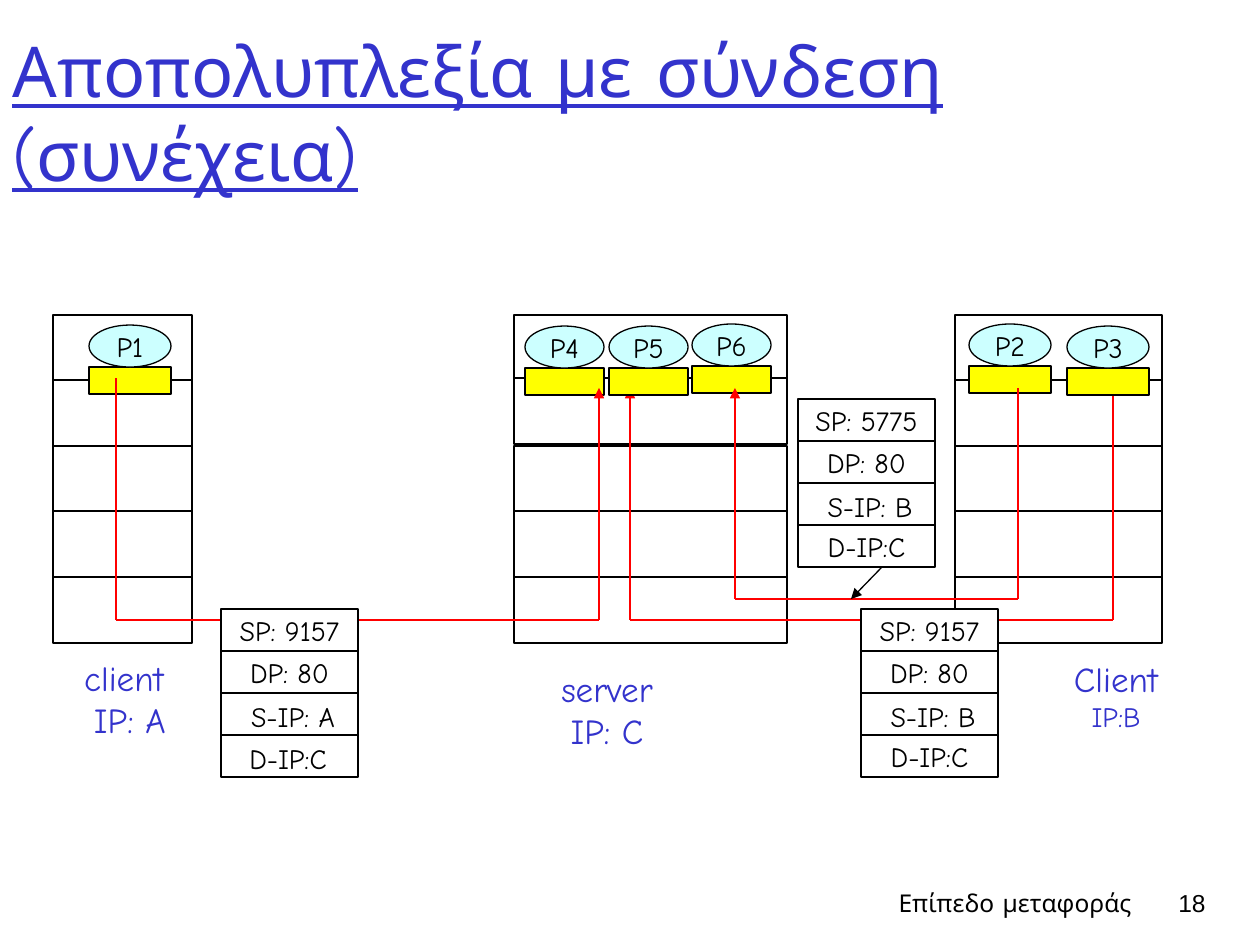
from lxml.etree import SubElement
from pptx import Presentation
from pptx.dml.color import RGBColor
from pptx.enum.shapes import MSO_CONNECTOR, MSO_SHAPE
from pptx.enum.text import MSO_ANCHOR, PP_ALIGN
from pptx.oxml.ns import qn
from pptx.util import Emu, Pt

INK, BLUE, RED = "000000", "3333CC", "FF0000"
WHITE, AQUA, YELLOW = "FFFFFF", "CCFFFF", "FFFF00"
FACE = "Comic Neue"


def px(n):
    return Emu(round(n * 914400 / 126))


def paint(target, hue):
    if hasattr(target, "solid"):
        target.solid()
        target = target.fore_color
    target.rgb = RGBColor.from_string(hue)


def write(frame, lines, hue=INK, align=PP_ALIGN.CENTER, wrap=False,
          anchor=MSO_ANCHOR.TOP, face=FACE, under=None):
    """Fill a frame with (text, size) lines."""
    frame.word_wrap = wrap
    frame.vertical_anchor = anchor
    for i, (text, size) in enumerate(lines):
        para = frame.add_paragraph() if i else frame.paragraphs[0]
        para.text = text
        para.alignment = align
        font = para.font
        font.size, font.name, font.underline = Pt(size), face, under
        paint(font.color, hue)


def label(slide, x, y, w, h, lines, **style):
    box = slide.shapes.add_textbox(px(x), px(y), px(w), px(h))
    write(box.text_frame, lines, **style)


def block(slide, x, y, w, h, hue=WHITE, text="", kind=MSO_SHAPE.RECTANGLE):
    shape = slide.shapes.add_shape(kind, px(x), px(y), px(w), px(h))
    shape.shadow.inherit = False
    paint(shape.fill, hue)
    paint(shape.line.fill, INK)
    shape.line.width = Pt(0.75)
    if text:
        write(shape.text_frame, [(text, 16)], anchor=MSO_ANCHOR.MIDDLE)


def wire(slide, start, end, hue=RED, width=1.5, arrow=False):
    line = slide.shapes.add_connector(
        MSO_CONNECTOR.STRAIGHT, *map(px, start + end))
    paint(line.line.fill, hue)
    line.line.width = Pt(width)
    props = line._element.spPr
    if arrow:
        SubElement(props.find(qn("a:ln")), qn("a:tailEnd"), type="triangle")
    SubElement(props, qn("a:effectLst"))


def path(slide, *points, arrow=False):
    """Join points with red wires; the last may carry an arrow."""
    for i, (start, end) in enumerate(zip(points, points[1:]), 2):
        wire(slide, start, end, arrow=arrow and i == len(points))


def host(slide, x, y, w, lift=0):
    """Stack of five layers; lift raises the second one."""
    for i in range(5):
        top = y + i * 131 // 2 - (lift if i == 1 else 0)
        block(slide, x, top, w, 66)


def process(slide, x, y, w, name):
    """Process oval standing on its socket."""
    block(slide, x, y + 42, w, 27, YELLOW)
    block(slide, x, y, w, 42, AQUA, name, MSO_SHAPE.OVAL)


def packet(slide, x, y, port, source, loose=None):
    """Header of four fields; loose fields are set in their own box."""
    loose = loose or {2: 120}
    texts = f"SP: {port}", "DP: 80", f"S-IP: {source}", "D-IP:C"
    for i, text in enumerate(texts):
        block(slide, x, y + 42 * i, 137, 42, text="" if i in loose else text)
    for i, w in loose.items():
        label(slide, x + 12, y + 42 * i, w, 47, [(texts[i], 16)])


def heading(slide, x, y, w, h):
    label(slide, x, y, w, h, [("Αποπολυπλεξία με σύνδεση (συνέχεια)", 40)],
          hue=BLUE, align=PP_ALIGN.LEFT, wrap=True,
          anchor=MSO_ANCHOR.MIDDLE, under=True)


def footer(slide, x, y, h):
    style = {"align": PP_ALIGN.RIGHT, "wrap": True}
    label(slide, x, y, 514, h, [("Επίπεδο μεταφοράς", 14)], **style)
    label(slide, x + 495, y, 93, h, [("18", 14)], face="Arial", **style)


def diagram(slide, x, y):
    def at(dx, dy):
        return x + dx, y + dy

    # Hosts and the processes behind the wires
    host(slide, *at(0, 0), 139)
    process(slide, *at(36, 10), 82, "P1")
    host(slide, *at(902, 0), 207)
    process(slide, *at(916, 9), 82, "P2")
    host(slide, *at(461, 0), 273, lift=2)
    process(slide, *at(472, 11), 79, "P4")

    # Connections from P1 to P4 and from P3 to P5
    path(slide, at(63, 63), at(63, 305), at(546, 305), at(546, 73), arrow=True)
    path(slide, at(1060, 63), at(1060, 305), at(577, 305), at(577, 73),
         arrow=True)

    # Processes in front of the wires
    for dx, dy, w, name in ((556, 11, 79, "P5"), (639, 9, 79, "P6"),
                            (1014, 11, 82, "P3")):
        process(slide, *at(dx, dy), w, name)

    # Connection from P2 to P6
    path(slide, at(965, 73), at(965, 284), at(682, 284), at(682, 73),
         arrow=True)

    # Packet headers
    packet(slide, *at(168, 294), 9157, "A", {2: 120, 3: 110})
    packet(slide, *at(808, 294), 9157, "B")
    packet(slide, *at(745, 84), 5775, "B")
    wire(slide, at(829, 252), at(798, 284), INK, 0.75, arrow=True)

    # Host names
    for dx, dy, w, lines in (
            (11, 335, 120, [("client", 20), (" IP: A", 20)]),
            (488, 346, 132, [("server", 20), ("IP: C", 20)]),
            (1003, 336, 120, [("Client", 20), ("IP:B", 16)])):
        label(slide, *at(dx, dy), w, 97, lines, hue=BLUE)


def main():
    deck = Presentation()
    deck.slide_width, deck.slide_height = px(1260), px(945)
    slide = deck.slides.add_slide(deck.slide_layouts[6])
    heading(slide, 0, 32, 1260, 158)
    diagram(slide, 53, 315)
    footer(slide, 630, 882, 63)
    deck.save("out.pptx")


if __name__ == "__main__":
    main()
